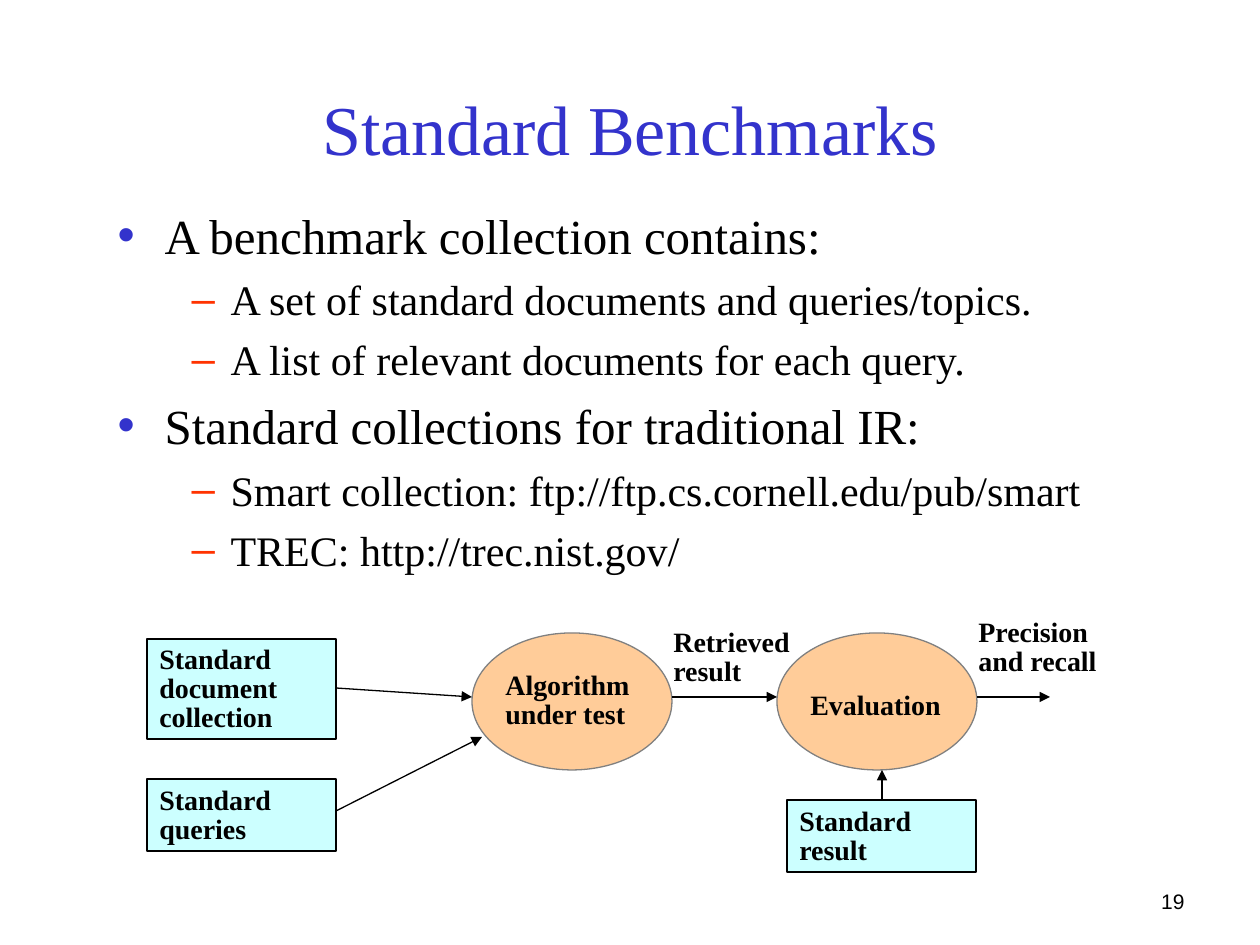
from dataclasses import dataclass

from lxml import etree
from pptx import Presentation
from pptx.dml.color import RGBColor
from pptx.enum.shapes import MSO_CONNECTOR, MSO_SHAPE
from pptx.enum.text import MSO_ANCHOR, MSO_AUTO_SIZE, PP_ALIGN
from pptx.oxml.ns import qn
from pptx.util import Emu, Pt

STRAIGHT = MSO_CONNECTOR.STRAIGHT
RECTANGLE, OVAL = MSO_SHAPE.RECTANGLE, MSO_SHAPE.OVAL
TOP, MIDDLE, BOTTOM = MSO_ANCHOR.TOP, MSO_ANCHOR.MIDDLE, MSO_ANCHOR.BOTTOM
LEFT, CENTER, RIGHT = PP_ALIGN.LEFT, PP_ALIGN.CENTER, PP_ALIGN.RIGHT
NO_AUTOFIT = MSO_AUTO_SIZE.NONE
EMU_PER_PX = 914400 / 126


@dataclass(frozen=True)
class Theme:
    serif: str = "Times New Roman"
    sans: str = "Arial"
    ink: str = "000000"
    blue: str = "3333CC"
    red: str = "FF3300"
    box_fill: str = "CCFFFF"
    oval_fill: str = "FFCC99"
    oval_line: str = "808080"
    title_size: int = 40
    label_size: int = 16
    number_size: int = 12
    line_width: float = 0.75


@dataclass(frozen=True)
class Area:
    left: int
    top: int
    width: int
    height: int

    def emu(self) -> list[Emu]:
        return [px(n) for n in (self.left, self.top, self.width, self.height)]


@dataclass(frozen=True)
class Label:
    text: str
    area: Area


@dataclass(frozen=True)
class Process:
    oval: Area
    label: Label


@dataclass(frozen=True)
class Arrow:
    start: tuple[int, int]
    end: tuple[int, int]


@dataclass(frozen=True)
class ListLevel:
    bullet: str
    bullet_color: str
    size: int
    indent: int
    hanging: int
    space_before: float


THEME = Theme()
LIST_LEVELS = (
    ListLevel("•", THEME.blue, 28, 47, 47, 6.5),
    ListLevel("–", THEME.red, 24, 113, 39, 5.5),
)
OUTLINE = (
    (0, "A benchmark collection contains:"),
    (1, "A set of standard documents and queries/topics."),
    (1, "A list of relevant documents for each query."),
    (0, "Standard collections for traditional IR:"),
    (1, "Smart collection: ftp://ftp.cs.cornell.edu/pub/smart"),
    (1, "TREC: http://trec.nist.gov/"),
)
BOXES = (
    Label("Standard document collection", Area(147, 639, 189, 100)),
    Label("Standard queries", Area(147, 779, 189, 72)),
    Label("Standard result", Area(787, 800, 189, 72)),
)
PROCESSES = (
    Process(Area(472, 633, 200, 137),
            Label("Algorithm under test", Area(493, 665, 158, 71))),
    Process(Area(777, 633, 200, 137),
            Label("Evaluation", Area(798, 685, 158, 42))),
)
ARROWS = (
    Arrow((336, 688), (472, 697)),
    Arrow((336, 811), (482, 737)),
    Arrow((672, 697), (777, 697)),
    Arrow((977, 697), (1050, 697)),
    Arrow((882, 801), (882, 770)),
)
FLOW_LABELS = (
    Label("Retrieved result", Area(661, 622, 147, 71)),
    Label("Precision and recall", Area(966, 612, 147, 71)),
)


def px(value: int) -> Emu:
    return Emu(round(value * EMU_PER_PX))


def place(shape, area: Area) -> None:
    shape.left, shape.top, shape.width, shape.height = area.emu()


def set_font(paragraph, size: int, color: str = THEME.ink,
             name: str = THEME.serif, bold: bool = False) -> None:
    font = paragraph.font
    font.name, font.size, font.bold = name, Pt(size), bold
    font.color.rgb = RGBColor.from_string(color)


def write_text(shape, text: str, anchor, alignment):
    """Fill the shape with one wrapped paragraph and return it."""
    frame = shape.text_frame
    frame.word_wrap, frame.auto_size = True, NO_AUTOFIT
    frame.vertical_anchor = anchor
    paragraph = frame.paragraphs[0]
    paragraph.text, paragraph.alignment = text, alignment
    return paragraph


def write_label(shape, text: str) -> None:
    paragraph = write_text(shape, text, BOTTOM, LEFT)
    paragraph.line_spacing = 0.85
    set_font(paragraph, THEME.label_size, bold=True)


def add_label(shapes, label: Label) -> None:
    write_label(shapes.add_textbox(*label.area.emu()), label.text)


def add_filled_shape(shapes, kind, area: Area, fill: str, line: str):
    shape = shapes.add_shape(kind, *area.emu())
    shape.shadow.inherit = False
    shape.fill.solid()
    shape.fill.fore_color.rgb = RGBColor.from_string(fill)
    shape.line.color.rgb = RGBColor.from_string(line)
    shape.line.width = Pt(THEME.line_width)
    return shape


def add_process(shapes, process: Process) -> None:
    group = shapes.add_group_shape()
    add_filled_shape(group.shapes, OVAL, process.oval, THEME.oval_fill, THEME.oval_line)
    add_label(group.shapes, process.label)


def add_arrow(shapes, arrow: Arrow) -> None:
    ends = [px(n) for n in (*arrow.start, *arrow.end)]
    connector = shapes.add_connector(STRAIGHT, *ends)
    connector.line.color.rgb = RGBColor.from_string(THEME.ink)
    connector.line.width = Pt(THEME.line_width)
    properties = connector.line._get_or_add_ln()
    etree.SubElement(properties, qn("a:tailEnd"), type="triangle")
    etree.SubElement(connector._element.spPr, qn("a:effectLst"))


def format_list_item(paragraph, level: int) -> None:
    style = LIST_LEVELS[level]
    paragraph.level = level
    paragraph.space_before = Pt(style.space_before)
    properties = paragraph._p.get_or_add_pPr()
    properties.set("marL", str(px(style.indent)))
    properties.set("indent", str(px(-style.hanging)))
    color = etree.SubElement(properties, qn("a:buClr"))
    etree.SubElement(color, qn("a:srgbClr"), val=style.bullet_color)
    etree.SubElement(properties, qn("a:buChar"), char=style.bullet)
    set_font(paragraph, style.size)


def fill_outline(body) -> None:
    place(body, Area(105, 199, 1021, 386))
    frame = body.text_frame
    frame.auto_size = NO_AUTOFIT
    frame.text = "\n".join(text for _, text in OUTLINE)
    for paragraph, (level, _) in zip(frame.paragraphs, OUTLINE):
        format_list_item(paragraph, level)


def main() -> None:
    presentation = Presentation()
    presentation.slide_width, presentation.slide_height = px(1260), px(945)
    slide = presentation.slides.add_slide(presentation.slide_layouts[1])
    shapes = slide.shapes

    place(shapes.title, Area(73, 73, 1114, 108))
    title = write_text(shapes.title, "Standard Benchmarks", MIDDLE, CENTER)
    set_font(title, THEME.title_size, THEME.blue)
    fill_outline(slide.placeholders[1])

    for box in BOXES:
        shape = add_filled_shape(shapes, RECTANGLE, box.area, THEME.box_fill, THEME.ink)
        write_label(shape, box.text)
    for process in PROCESSES:
        add_process(shapes, process)
    for arrow in ARROWS:
        add_arrow(shapes, arrow)
    for label in FLOW_LABELS:
        add_label(shapes, label)

    number_box = shapes.add_textbox(*Area(935, 882, 262, 32).emu())
    number = write_text(number_box, "19", TOP, RIGHT)
    set_font(number, THEME.number_size, name=THEME.sans)
    presentation.save("out.pptx")


if __name__ == "__main__":
    main()
